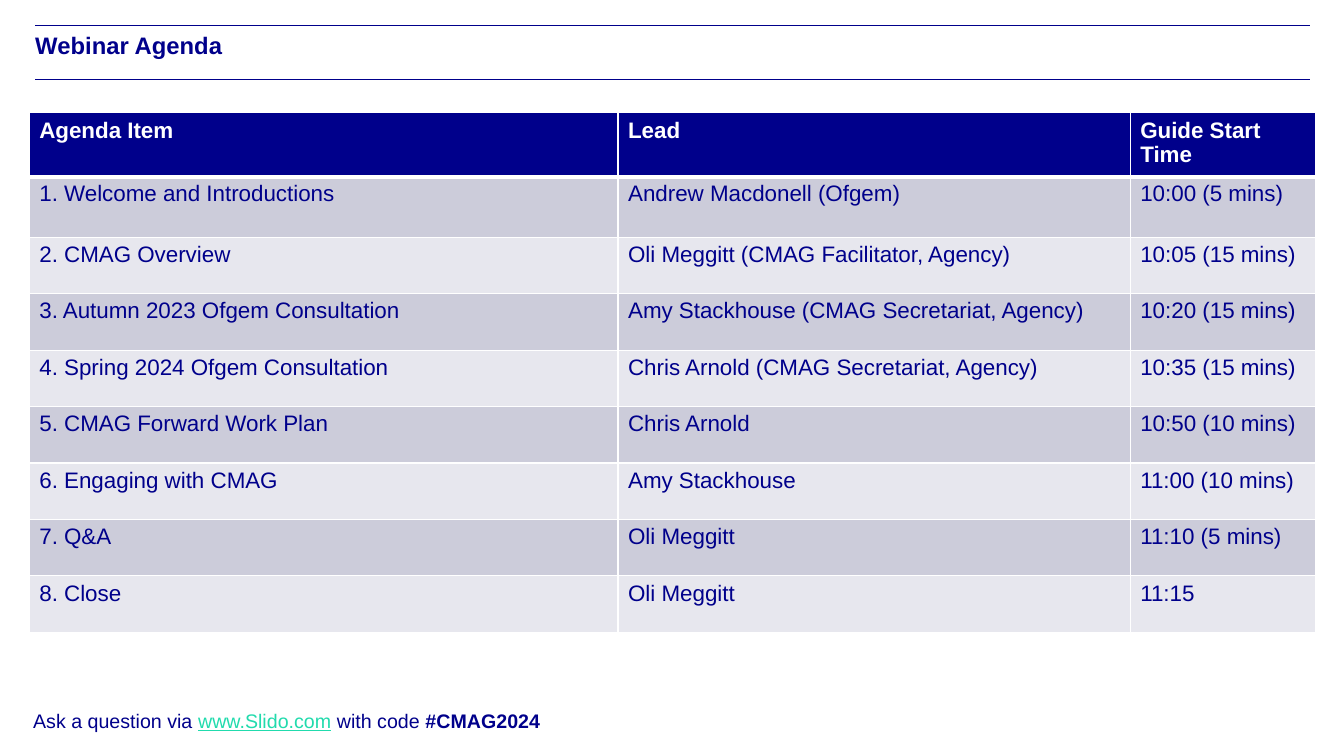
from lxml.etree import SubElement
from pptx import Presentation
from pptx.dml.color import RGBColor
from pptx.enum.shapes import MSO_CONNECTOR as Connector
from pptx.oxml.ns import qn
from pptx.util import Inches, Pt

NAVY = RGBColor(0x00, 0x00, 0x8B)
WHITE = RGBColor(0xFF, 0xFF, 0xFF)
MINT = RGBColor(0x21, 0xDB, 0xAD)
BAND_DARK = RGBColor(0xCC, 0xCC, 0xDA)
BAND_LIGHT = RGBColor(0xE7, 0xE7, 0xEE)

COLUMN_WIDTHS = (5.84, 5.08, 1.84)
ROW_HEIGHT = 0.56
FIRST_ITEM_HEIGHT = 0.6
HEADINGS = ("Agenda Item", "Lead", "Guide Start Time")
AGENDA = (
    ("Welcome and Introductions", "Andrew Macdonell (Ofgem)", "10:00 (5 mins)"),
    ("CMAG Overview", "Oli Meggitt (CMAG Facilitator, Agency)", "10:05 (15 mins)"),
    ("Autumn 2023 Ofgem Consultation",
     "Amy Stackhouse (CMAG Secretariat, Agency)", "10:20 (15 mins)"),
    ("Spring 2024 Ofgem Consultation",
     "Chris Arnold (CMAG Secretariat, Agency)", "10:35 (15 mins)"),
    ("CMAG Forward Work Plan", "Chris Arnold", "10:50 (10 mins)"),
    ("Engaging with CMAG", "Amy Stackhouse", "11:00 (10 mins)"),
    ("Q&A", "Oli Meggitt", "11:10 (5 mins)"),
    ("Close", "Oli Meggitt", "11:15"),
)


def add_run(paragraph, text, size=16, color=NAVY, bold=False, underline=False):
    run = paragraph.add_run()
    run.text = text
    font = run.font
    font.name = "Arial"
    font.size = Pt(size)
    font.color.rgb = color
    font.bold = bold
    font.underline = underline


def add_text_box(slide, left, top, width, height, inset=None):
    """Add a wrapping text box and return its first paragraph."""
    box = slide.shapes.add_textbox(
        Inches(left), Inches(top), Inches(width), Inches(height))
    frame = box.text_frame
    frame.word_wrap = True
    if inset is not None:
        frame.margin_left = frame.margin_right = Inches(inset)
        frame.margin_top = frame.margin_bottom = Inches(inset)
    return frame.paragraphs[0]


def add_rule(slide, left, top, width):
    rule = slide.shapes.add_connector(
        Connector.STRAIGHT, Inches(left), Inches(top),
        Inches(left + width), Inches(top))
    rule.line.color.rgb = NAVY
    rule.line.width = Pt(0.5)
    SubElement(rule._element.spPr, qn("a:effectLst"))


def set_borders(cell, top=1, bottom=1):
    """Draw white borders, with widths in points."""
    properties = cell._tc.get_or_add_tcPr()
    for side, width in (("L", 1), ("R", 1), ("T", top), ("B", bottom)):
        line = SubElement(properties, qn(f"a:ln{side}"), w=str(Pt(width)))
        fill = SubElement(line, qn("a:solidFill"))
        SubElement(fill, qn("a:srgbClr"), val=str(WHITE))


def add_agenda_table(slide, left, top):
    rows = [HEADINGS] + [
        (f"{number}. {item}", lead, time)
        for number, (item, lead, time) in enumerate(AGENDA, 1)]
    heights = [ROW_HEIGHT] * len(rows)
    heights[1] = FIRST_ITEM_HEIGHT
    table = slide.shapes.add_table(
        len(rows), len(HEADINGS), Inches(left), Inches(top),
        Inches(sum(COLUMN_WIDTHS)), Inches(sum(heights))).table
    for column, width in zip(table.columns, COLUMN_WIDTHS):
        column.width = Inches(width)

    for row_index, texts in enumerate(rows):
        table.rows[row_index].height = Inches(heights[row_index])
        is_header = row_index == 0
        band = BAND_DARK if row_index % 2 else BAND_LIGHT
        for column_index, text in enumerate(texts):
            cell = table.cell(row_index, column_index)
            set_borders(cell, top=3 if row_index == 1 else 1,
                        bottom=3 if is_header else 1)
            cell.fill.solid()
            cell.fill.fore_color.rgb = NAVY if is_header else band
            add_run(cell.text_frame.paragraphs[0], text,
                    color=WHITE if is_header else NAVY, bold=is_header)


def main():
    presentation = Presentation()
    presentation.slide_width = Inches(13.33)
    presentation.slide_height = Inches(7.5)
    slide = presentation.slides.add_slide(presentation.slide_layouts[6])

    # Title between two rules
    for top in (0.25, 0.79):
        add_rule(slide, 0.35, top, 12.64)
    title = add_text_box(slide, 0.35, 0.3, 12.64, 0.49, inset=0)
    add_run(title, "Webinar Agenda", size=17, bold=True)

    # Agenda
    add_agenda_table(slide, 0.29, 1.12)

    # Question prompt
    prompt = add_text_box(slide, 0.23, 6.98, 5.61, 0.34)
    add_run(prompt, "Ask a question via ", size=14)
    add_run(prompt, "www.Slido.com", size=14, color=MINT, underline=True)
    add_run(prompt, " with code ", size=14)
    add_run(prompt, "#CMAG2024", size=14, bold=True)

    presentation.save("out.pptx")


if __name__ == "__main__":
    main()
